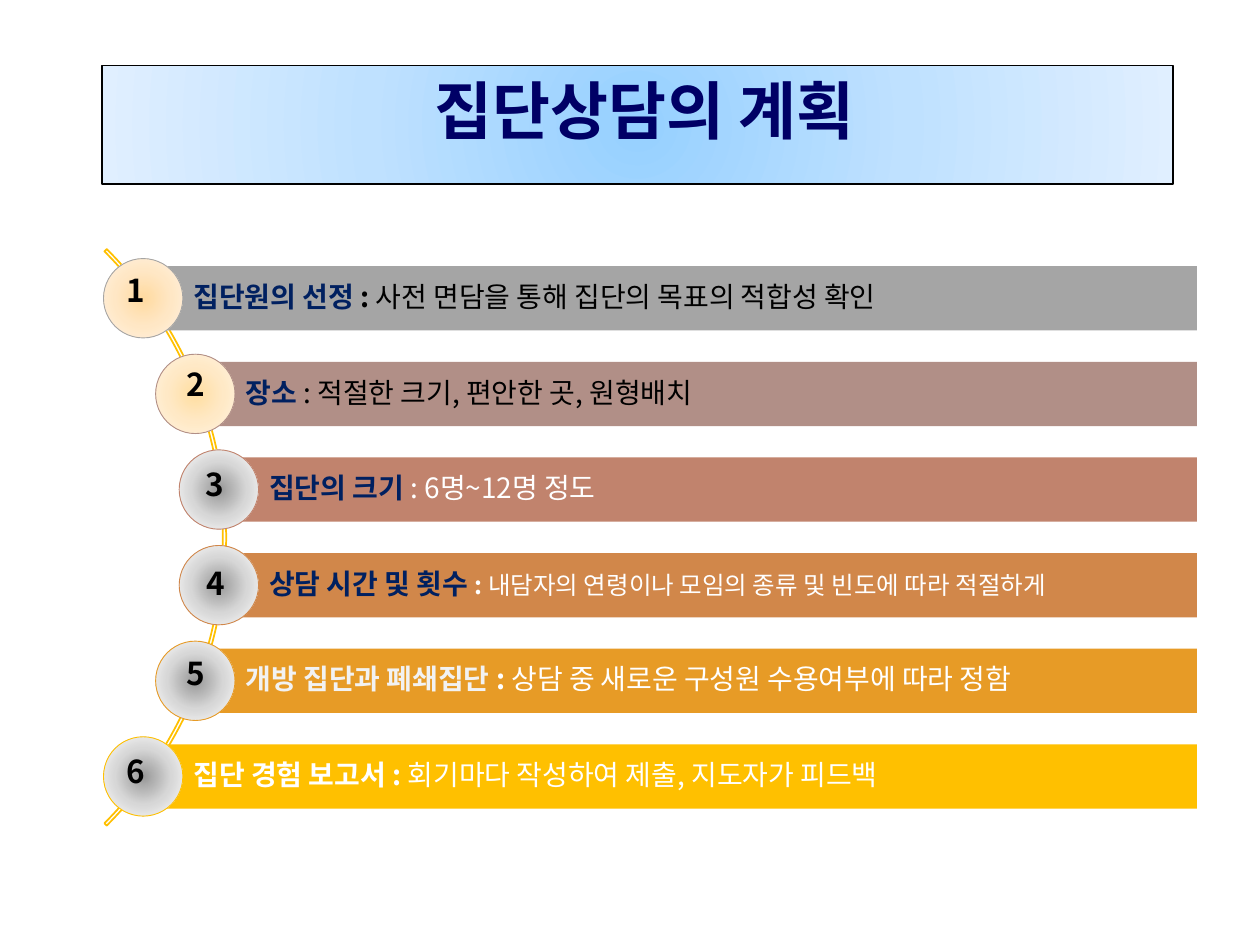
import math
from dataclasses import dataclass

import pptx
import pptx.util
import pptx.dml.color
import pptx.enum.shapes
import pptx.enum.text
import pptx.oxml
import pptx.oxml.ns
from lxml import etree


@dataclass(frozen=True)
class Theme:
    font: str = "Noto Sans CJK KR"
    title_size: int = 36
    number_size: int = 18
    step_size: int = 16
    small_size: int = 14
    title: str = "000066"
    navy: str = "002060"
    black: str = "000000"
    white: str = "FFFFFF"
    pale: str = "F2F2F2"
    arc: str = "FFC000"
    sky: tuple = ("96D0FF", "BFE1FF", "E0EFFF")
    peach: tuple = ("FFDAA0", "FFE7C5", "FFF3E3")
    cream: tuple = ("FFDEA1", "FFE9C6", "FFF4E3")
    silver: tuple = ("979797", "D7D7D7", "FFFFFF")


@dataclass(frozen=True)
class Step:
    heading: str
    detail: str
    bar: str
    badge: tuple
    number_at: tuple
    heading_color: str
    detail_color: str
    bold_colon: bool = True
    detail_size: int = Theme.step_size


class Deck:
    COLUMNS, ROWS = 100, 75
    SHAPES = pptx.enum.shapes.MSO_SHAPE

    def __init__(self, theme):
        self.theme = theme
        self.file = pptx.Presentation()
        self.file.slide_width = pptx.util.Inches(10)
        self.file.slide_height = pptx.util.Inches(7.5)
        self.slide = self.file.slides.add_slide(self.file.slide_layouts[5])

    def box(self, column, row, width, height):
        across = self.file.slide_width / self.COLUMNS
        down = self.file.slide_height / self.ROWS
        return [round(share) for share in
                (column * across, row * down, width * across, height * down)]

    def color(self, value):
        return pptx.dml.color.RGBColor.from_string(value)

    def outline(self, shape, color, width):
        shape.line.color.rgb = self.color(color)
        shape.line.width = pptx.util.Pt(width)

    def radial(self, shape, colors):
        shape.fill.gradient()
        gradient = shape._element.spPr.find(pptx.oxml.ns.qn("a:gradFill"))
        stops = "".join(
            f'<a:gs pos="{place * 50000}"><a:srgbClr val="{color}"/></a:gs>'
            for place, color in enumerate(colors))
        radial = pptx.oxml.parse_xml(
            f'<a:gradFill {pptx.oxml.ns.nsdecls("a")} rotWithShape="1">'
            f'<a:gsLst>{stops}</a:gsLst><a:path path="circle">'
            '<a:fillToRect l="50000" t="50000" r="50000" b="50000"/>'
            '</a:path></a:gradFill>')
        gradient.getparent().replace(gradient, radial)

    def style(self, run, size, color, bold):
        run.font.name = self.theme.font
        run.font.size = pptx.util.Pt(size)
        run.font.bold = bold
        run.font.color.rgb = self.color(color)
        east_asian = etree.SubElement(run.font._element, pptx.oxml.ns.qn("a:ea"))
        east_asian.set("typeface", self.theme.font)

    def shape(self, preset, *place):
        shape = self.slide.shapes.add_shape(preset, *self.box(*place))
        shape.shadow.inherit = False
        return shape

    def title(self, wording, *place):
        title = self.slide.shapes.title
        title.left, title.top, title.width, title.height = self.box(*place)
        self.radial(title, self.theme.sky)
        self.outline(title, self.theme.black, 0.75)
        frame = title.text_frame
        frame.text = wording
        frame.vertical_anchor = pptx.enum.text.MSO_ANCHOR.TOP
        frame.auto_size = pptx.enum.text.MSO_AUTO_SIZE.NONE
        frame.paragraphs[0].alignment = pptx.enum.text.PP_ALIGN.CENTER
        self.style(frame.paragraphs[0].runs[0], self.theme.title_size,
                   self.theme.title, True)

    def arc(self, center, middle, radius):
        arc = self.shape(self.SHAPES.BLOCK_ARC, center - radius, middle - radius,
                         2 * radius, 2 * radius)
        for index, value in enumerate((189, 27, 0.004)):
            arc.adjustments[index] = value
        arc.fill.background()
        self.outline(arc, self.theme.arc, 1)

    def bar(self, step, *place):
        bar = self.shape(self.SHAPES.RECTANGLE, *place)
        bar.fill.solid()
        bar.fill.fore_color.rgb = self.color(step.bar)
        bar.line.fill.background()
        frame = bar.text_frame
        frame.word_wrap = True
        frame.vertical_anchor = pptx.enum.text.MSO_ANCHOR.MIDDLE
        frame.margin_left = pptx.util.Inches(0.4)
        frame.margin_top = frame.margin_right = frame.margin_bottom = pptx.util.Inches(0.04)
        line = frame.paragraphs[0]
        line.alignment = pptx.enum.text.PP_ALIGN.LEFT
        line.line_spacing = 0.9
        for wording, size, color, bold in (
                (step.heading + " ", self.theme.step_size, step.heading_color, True),
                (": ", step.detail_size, step.detail_color, step.bold_colon),
                (step.detail, step.detail_size, step.detail_color, False)):
            run = line.add_run()
            run.text = wording
            self.style(run, size, color, bold)

    def badge(self, step, *place):
        badge = self.shape(self.SHAPES.OVAL, *place)
        self.radial(badge, step.badge)
        self.outline(badge, step.bar, 0.5)

    def number(self, value, *place):
        number = self.slide.shapes.add_textbox(*self.box(*place))
        frame = number.text_frame
        frame.text = str(value)
        frame.word_wrap = False
        frame.auto_size = pptx.enum.text.MSO_AUTO_SIZE.SHAPE_TO_FIT_TEXT
        self.style(frame.paragraphs[0].runs[0], self.theme.number_size,
                   self.theme.black, True)

    def save(self):
        self.file.save("out.pptx")


def main():
    theme = Theme()
    steps = [
        Step("집단원의 선정", "사전 면담을 통해 집단의 목표의 적합성 확인",
             "A5A5A5", theme.peach, (9.1, 21), theme.navy, theme.black),
        Step("장소", "적절한 크기, 편안한 곳, 원형배치",
             "B18F87", theme.cream, (13.8, 28.5), theme.navy, theme.black, False),
        Step("집단의 크기", "6명~12명 정도",
             "C1836D", theme.silver, (15.3, 36.4), theme.navy, theme.white, False),
        Step("상담 시간 및 횟수", "내담자의 연령이나 모임의 종류 및 빈도에 따라 적절하게",
             "D1874A", theme.silver, (15.4, 44.3), theme.navy, theme.white, True,
             theme.small_size),
        Step("개방 집단과 폐쇄집단", "상담 중 새로운 구성원 수용여부에 따라 정함",
             "E79B26", theme.silver, (13.8, 51.4), theme.pale, theme.white),
        Step("집단 경험 보고서", "회기마다 작성하여 제출, 지도자가 피드백",
             "FFC000", theme.silver, (9.1, 59.2), theme.white, theme.white),
    ]
    center, middle, orbit = -14.4, 42.65, 32
    pitch, bar_height, badge_size, right_edge = 7.59, 5.1, 6.3, 95

    deck = Deck(theme)
    deck.title(" 집단상담의 계획", 8.1, 5.2, 85, 9.4)
    deck.arc(center, middle, 32.35)
    for index, step in enumerate(steps):
        rise = (index - (len(steps) - 1) / 2) * pitch
        left = center + math.sqrt(orbit ** 2 - rise ** 2)
        deck.bar(step, left, middle + rise - bar_height / 2,
                 right_edge - left, bar_height)
        deck.badge(step, left - badge_size / 2, middle + rise - badge_size / 2,
                   badge_size, badge_size)
    for value, step in enumerate(steps, 1):
        deck.number(value, *step.number_at, 4, 5)
    deck.save()


if __name__ == "__main__":
    main()
